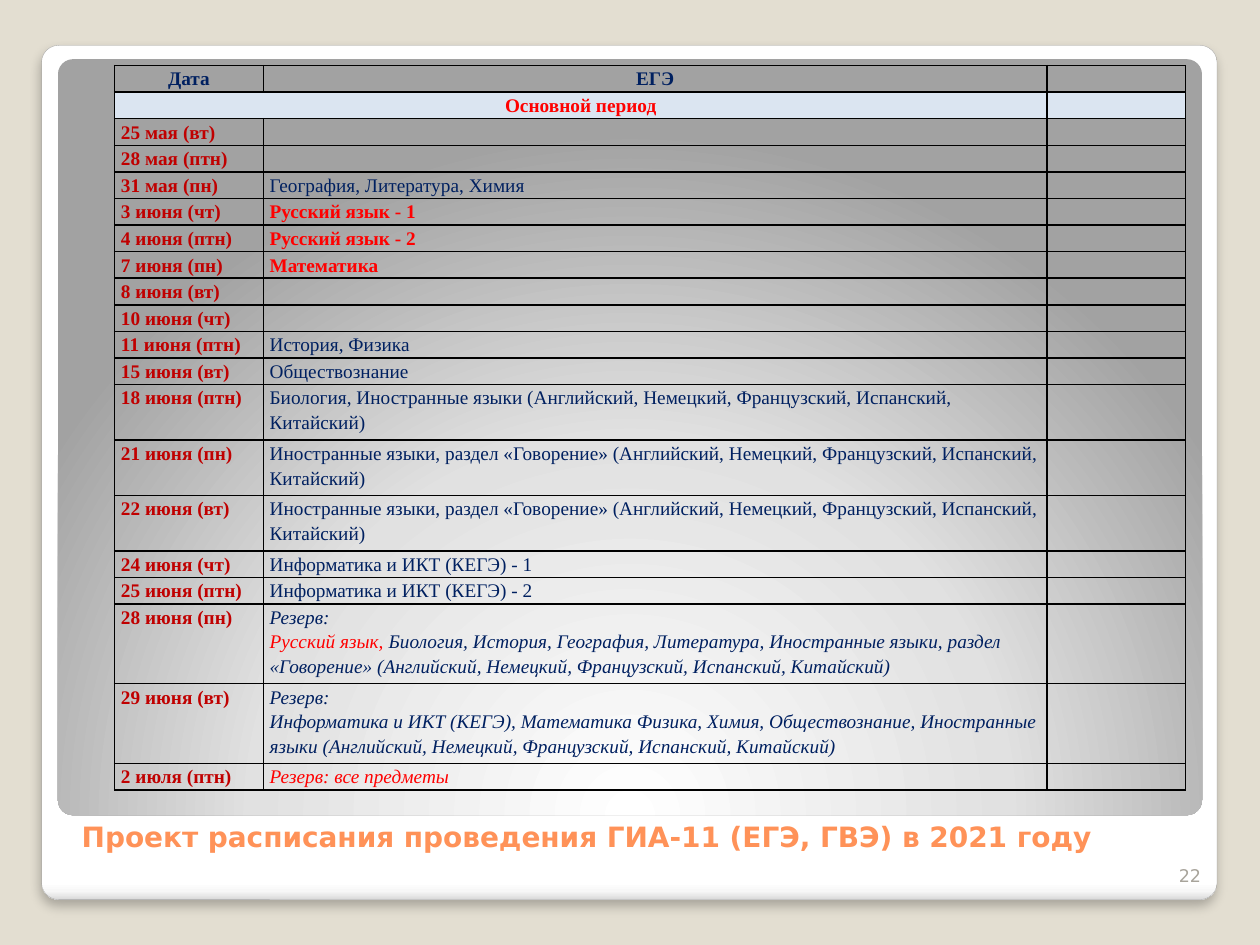
"""Build the slide with the draft 2021 state exam timetable."""
from lxml.etree import SubElement
from pptx import Presentation
from pptx.dml.color import RGBColor
from pptx.enum.shapes import MSO_SHAPE
from pptx.enum.text import MSO_ANCHOR, PP_ALIGN
from pptx.oxml import parse_xml
from pptx.oxml.ns import nsdecls, qn
from pptx.util import Inches, Pt

COLORS = {
    "backdrop": "E3DED1", "card line": "A4A4A4", "title": "FF9258", "number": "A8A49B",
    "navy": "002060", "red": "FF0000", "date": "C00000", "band": "DBE5F1", "border": "000000",
}
STYLES = {
    "header": {"bold": True, "color": "navy"},
    "period": {"bold": True, "color": "red"},
    "date": {"bold": True, "color": "date"},
    "subject": {"bold": False, "color": "navy"},
    "required": {"bold": True, "color": "red"},
    "reserve": {"bold": False, "italic": True, "color": "navy"},
    "reserve red": {"bold": False, "italic": True, "color": "red"},
    "title": {"bold": True, "color": "title", "size": Pt(16), "name": "DejaVu Sans"},
    "number": {"bold": False, "color": "number", "size": Pt(10), "name": "DejaVu Sans"},
}
TABLE_FONT = {"size": Pt(11), "name": "Times New Roman"}


def write(frame, paragraphs, align=PP_ALIGN.LEFT, spacing=None):
    """Fill a text frame with paragraphs of (text, style) runs."""
    for index, pieces in enumerate(paragraphs):
        paragraph = frame.add_paragraph() if index else frame.paragraphs[0]
        paragraph.alignment, paragraph.line_spacing = align, spacing
        for text, style in pieces:
            run = paragraph.add_run()
            run.text = text
            for key, value in {**TABLE_FONT, **STYLES[style]}.items():
                if key == "color":
                    run.font.color.rgb = RGBColor.from_string(COLORS[value])
                else:
                    setattr(run.font, key, value)
        if not pieces:
            SubElement(paragraph._p, qn("a:endParaRPr"), sz="1100")


presentation = Presentation()
presentation.slide_width, presentation.slide_height = Inches(10), Inches(7.5)
slide = presentation.slides.add_slide(presentation.slide_layouts[6])
slide.background.fill.solid()
slide.background.fill.fore_color.rgb = RGBColor.from_string(COLORS["backdrop"])

PANELS = [
    ((0.33, 0.36, 9.33, 6.78), [(0, "FFFFFF"), (98, "FFFFFF"), (99, "F7F7F7"), (100, "DADADA")],
     '<a:lin ang="5400000" scaled="0"/>'),
    ((0.46, 0.47, 9.08, 6), [(0, "FFFFFF"), (55, "E1E1E1"), (100, "A2A2A2")],
     '<a:path path="circle"><a:fillToRect l="50000" t="175000" r="50000" b="-75000"/></a:path>'),
]
panels = []
for box, stops, direction in PANELS:
    panel = slide.shapes.add_shape(MSO_SHAPE.ROUNDED_RECTANGLE, *map(Inches, box))
    panel.adjustments[0] = 0.02
    panel.shadow.inherit = False
    panel.line.fill.background()
    marks = "".join(f'<a:gs pos="{at * 1000}"><a:srgbClr val="{tone}"/></a:gs>' for at, tone in stops)
    panel._element.spPr.insert(2, parse_xml(
        f'<a:gradFill {nsdecls("a")} rotWithShape="1"><a:gsLst>{marks}</a:gsLst>{direction}</a:gradFill>'))
    panels.append(panel)
card = panels[0]
card.line.color.rgb = RGBColor.from_string(COLORS["card line"])
card.line.width = Pt(0.16)
card._element.spPr.find(qn("a:effectLst")).append(parse_xml(
    f'<a:outerShdw {nsdecls("a")} blurRad="{Pt(6)}" dist="{Pt(4)}" dir="5400000" algn="t" rotWithShape="0">'
    '<a:srgbClr val="000000"><a:alpha val="25000"/></a:srgbClr></a:outerShdw>'))

CAPTIONS = [
    ((0.55, 6.35, 8.95, 0.47), "Проект расписания проведения ГИА-11 (ЕГЭ, ГВЭ) в 2021 году",
     "title", PP_ALIGN.LEFT),
    ((9.13, 6.68, 0.5, 0.4), "22", "number", PP_ALIGN.RIGHT),
]
for box, text, style, align in CAPTIONS:
    caption = slide.shapes.add_textbox(*map(Inches, box)).text_frame
    caption.word_wrap = True
    caption.vertical_anchor = MSO_ANCHOR.BOTTOM
    write(caption, [[(text, style)]], align)

LANGUAGES = "(Английский, Немецкий, Французский, Испанский, Китайский)"
SPEAKING = f"Иностранные языки, раздел «Говорение» {LANGUAGES}"
RESERVE = [("Резерв:", "reserve")]
EXAMS = [
    ("25 мая (вт)", 0.21, [[]]),
    ("28 мая (птн)", 0.21, [[]]),
    ("31 мая (пн)", 0.21, [[("География, Литература, Химия", "subject")]]),
    ("3 июня (чт)", 0.21, [[("Русский язык - 1", "required")]]),
    ("4 июня (птн)", 0.21, [[("Русский язык - 2", "required")]]),
    ("7 июня (пн)", 0.21, [[("Математика", "required")]]),
    ("8 июня (вт)", 0.21, [[]]),
    ("10 июня (чт)", 0.21, [[]]),
    ("11 июня (птн)", 0.21, [[("История, Физика", "subject")]]),
    ("15 июня (вт)", 0.21, [[("Обществознание", "subject")]]),
    ("18 июня (птн)", 0.44, [[(f"Биология, Иностранные языки {LANGUAGES}", "subject")]]),
    ("21 июня (пн)", 0.44, [[(SPEAKING, "subject")]]),
    ("22 июня (вт)", 0.44, [[(SPEAKING, "subject")]]),
    ("24 июня (чт)", 0.21, [[("Информатика и ИКТ (КЕГЭ) - 1", "subject")]]),
    ("25 июня (птн)", 0.21, [[("Информатика и ИКТ (КЕГЭ) - 2", "subject")]]),
    ("28 июня (пн)", 0.62, [RESERVE, [
        ("Русский язык, ", "reserve red"),
        (f"Биология, История, География, Литература, {SPEAKING}", "reserve")]]),
    ("29 июня (вт)", 0.6, [RESERVE, [
        ("Информатика и ИКТ (КЕГЭ), Математика Физика, Химия, Обществознание, "
         f"Иностранные языки {LANGUAGES}", "reserve")]]),
    ("2 июля (птн)", 0.21, [[("Резерв: все предметы", "reserve red")]]),
]
ROWS = [
    (0.21, PP_ALIGN.CENTER, [[("Дата", "header")]], [[("ЕГЭ", "header")]]),
    (0.21, PP_ALIGN.CENTER, [[("Основной период", "period")]], [[]]),
] + [(height, PP_ALIGN.LEFT, [[(date, "date")]], subjects) for date, height, subjects in EXAMS]

timetable = slide.shapes.add_table(
    len(ROWS), 3, Inches(0.91), Inches(0.52), Inches(8.5), Inches(5.72)).table
timetable.first_row = timetable.horz_banding = False
for column, width in zip(timetable.columns, (1.18, 6.22, 1.1)):
    column.width = Inches(width)
timetable.cell(1, 0).merge(timetable.cell(1, 1))

for index, (height, align, date, subjects) in enumerate(ROWS):
    timetable.rows[index].height = Inches(height)
    for cell, content in zip(timetable.rows[index].cells, (date, subjects, [[]])):
        cell.margin_left = cell.margin_right = Inches(0.05)
        cell.margin_top = cell.margin_bottom = 0
        write(cell.text_frame, content, align, 1.15)
        for side in ("lnL", "lnR", "lnT", "lnB"):
            cell._tc.get_or_add_tcPr().append(parse_xml(
                f'<a:{side} {nsdecls("a")} w="{Pt(1)}"><a:solidFill>'
                f'<a:srgbClr val="{COLORS["border"]}"/></a:solidFill></a:{side}>'))
        if index == 1:
            cell.fill.solid()
            cell.fill.fore_color.rgb = RGBColor.from_string(COLORS["band"])
        else:
            cell.fill.background()

presentation.save("out.pptx")
